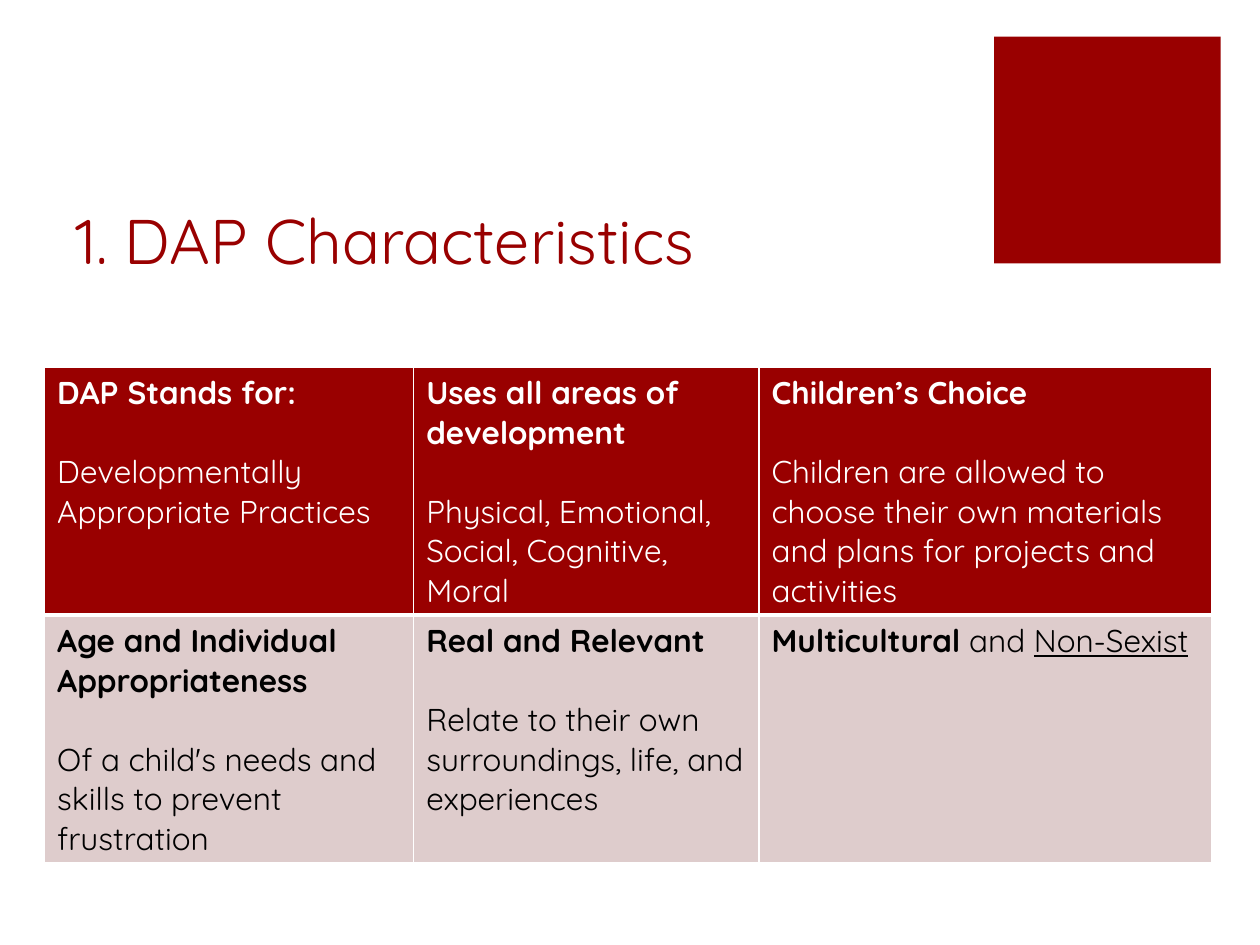
from lxml.etree import SubElement
from pptx import Presentation
from pptx.dml.color import RGBColor
from pptx.enum.shapes import MSO_SHAPE
from pptx.enum.text import MSO_ANCHOR
from pptx.oxml.ns import qn
from pptx.util import Cm, Pt

RED = RGBColor(0x99, 0x00, 0x00)
PINK = RGBColor(0xDE, 0xCC, 0xCC)
WHITE = RGBColor(0xFF, 0xFF, 0xFF)
BLACK = RGBColor(0x00, 0x00, 0x00)
FONT = "Quicksand"

# Each cell: heading, then body text
ROWS = [
    [("DAP Stands for:", "Developmentally Appropriate Practices"),
     ("Uses all areas of development",
      "Physical, Emotional, Social, Cognitive, Moral"),
     ("Children’s Choice",
      "Children are allowed to choose their own materials "
      "and plans for projects and activities")],
    [("Age and Individual Appropriateness",
      "Of a child's needs and skills to prevent frustration"),
     ("Real and Relevant",
      "Relate to their own surroundings, life, and experiences"),
     ("Multicultural", "")],
]
COLS = [7.44, 6.96, 9.12]
HIGH = 5
STYLES = [(RED, WHITE), (PINK, BLACK)]


def set_font(font, size, color, bold=False):
    font.name = FONT
    font.size = Pt(size)
    font.color.rgb = color
    font.bold = bold


def add_square(slide):
    box = slide.shapes.add_shape(
        MSO_SHAPE.RECTANGLE, Cm(20.04), Cm(0.74), Cm(4.57), Cm(4.57))
    box.shadow.inherit = False
    box.fill.solid()
    box.fill.fore_color.rgb = RED
    box.line.fill.background()


def add_title(slide, text):
    box = slide.shapes.add_textbox(Cm(1.27), Cm(2.54), Cm(18.08), Cm(3.18))
    frame = box.text_frame
    frame.word_wrap = True
    frame.vertical_anchor = MSO_ANCHOR.BOTTOM
    line = frame.paragraphs[0]
    line.text = text
    set_font(line.font, 36, RED)


def add_edges(cell, top, base):
    props = cell._tc.get_or_add_tcPr()
    for side, width in (("L", 1), ("R", 1), ("T", top), ("B", base)):
        edge = SubElement(props, qn(f"a:ln{side}"), w=str(Pt(width)))
        fill = SubElement(edge, qn("a:solidFill"))
        SubElement(fill, qn("a:srgbClr"), val=str(WHITE))


def fill_cell(cell, head, body, back, ink):
    cell.fill.solid()
    cell.fill.fore_color.rgb = back
    first = cell.text_frame.paragraphs[0]
    first.text = head
    set_font(first.font, 18, ink, True)
    if body:
        second = cell.text_frame.add_paragraph()
        second.text = body
        second.space_before = Pt(22.5)
        set_font(second.font, 18, ink)


def add_grid(slide):
    grid = slide.shapes.add_table(
        len(ROWS), len(COLS), Cm(0.9), Cm(7.4),
        Cm(sum(COLS)), Cm(HIGH * len(ROWS))).table
    for col, width in zip(grid.columns, COLS):
        col.width = Cm(width)
    for i, (row, (back, ink)) in enumerate(zip(ROWS, STYLES)):
        grid.rows[i].height = Cm(HIGH)
        for j, (head, body) in enumerate(row):
            cell = grid.cell(i, j)
            # Thick rule between the two rows
            add_edges(cell, 3 if i else 1, 1 if i else 3)
            fill_cell(cell, head, body, back, ink)

    # The last heading goes on in plain and underlined text
    line = grid.cell(1, 2).text_frame.paragraphs[0]
    for text, under in ((" and ", False), ("Non-Sexist", True)):
        run = line.add_run()
        run.text = text
        run.font.bold = False
        run.font.underline = under


def main():
    deck = Presentation()
    deck.slide_width, deck.slide_height = Cm(25.4), Cm(19.05)
    slide = deck.slides.add_slide(deck.slide_layouts[6])
    add_square(slide)
    add_title(slide, "1. DAP Characteristics")
    add_grid(slide)
    deck.save("out.pptx")


if __name__ == "__main__":
    main()
